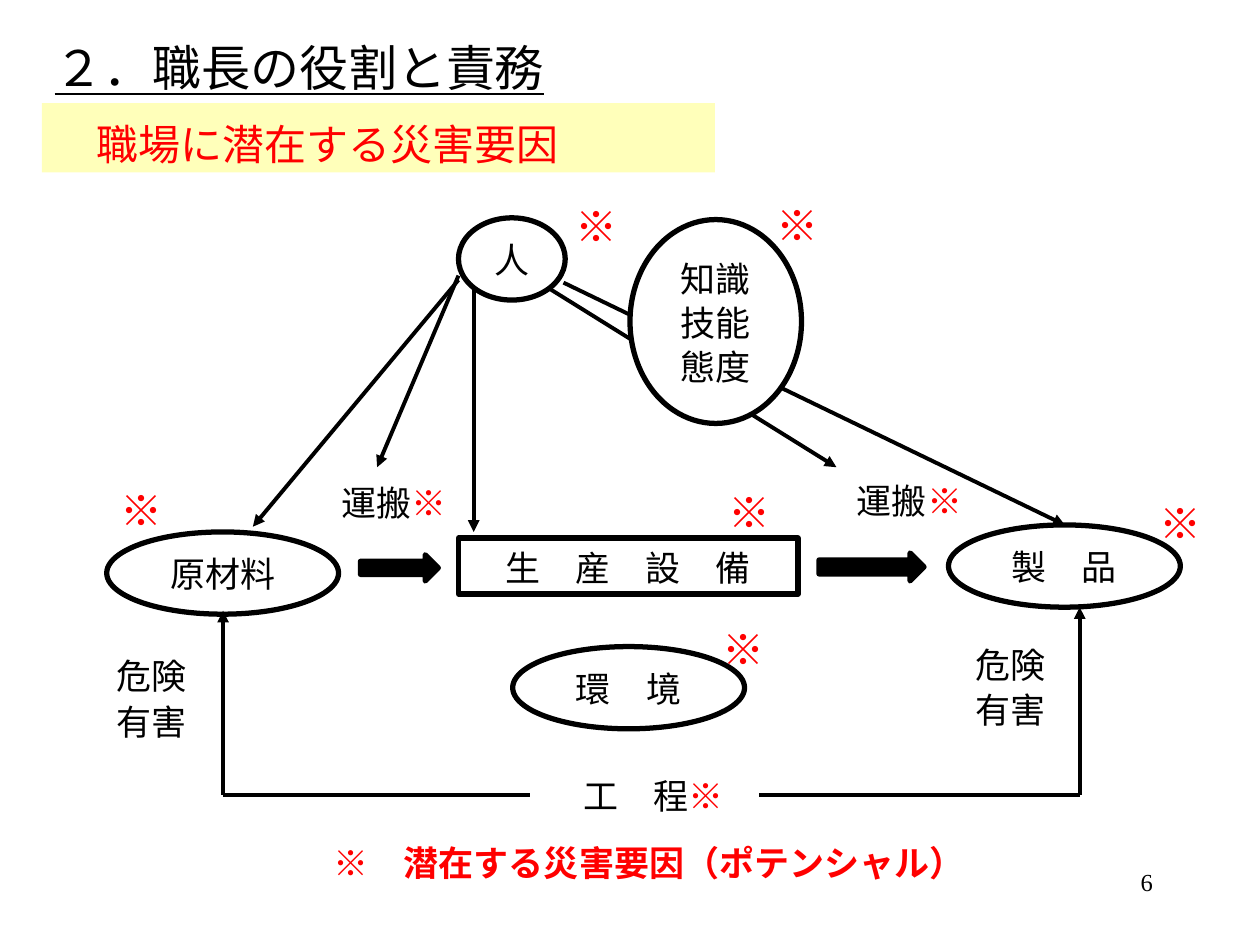
from pptx import Presentation
from pptx import util as u
from pptx.dml.color import RGBColor
from pptx.enum import shapes, text
from pptx.oxml.ns import qn
from lxml import etree

GOTHIC = "Noto Sans CJK JP"
BLACK, RED, WHITE, YELLOW = "000000", "FF0000", "FFFFFF", "FFFF00"
MARK = "※"
SHAPE = shapes.MSO_SHAPE
ALIGN = text.PP_ALIGN


def color(value):
    return RGBColor.from_string(value)


def place(box, left, top, width, height):
    box.left, box.top = u.Pt(left), u.Pt(top)
    box.width, box.height = u.Pt(width), u.Pt(height)


def format_span(span, size, ink, bold=False, font=GOTHIC):
    span.font.size = u.Pt(size)
    span.font.name = font
    span.font.bold = bold
    span.font.color.rgb = color(ink)
    east_asian = etree.SubElement(span.font._element, qn("a:ea"))
    east_asian.set("typeface", font)


def write(box, words, size=20, ink=BLACK, bold=False, spacing=None,
          align=ALIGN.CENTER, anchor=text.MSO_ANCHOR.TOP, font=GOTHIC):
    """Fill a box with lines of text in one style."""
    frame = box.text_frame
    frame.word_wrap = True
    frame.auto_size = text.MSO_AUTO_SIZE.NONE
    frame.vertical_anchor = anchor
    frame.text = words
    for para in frame.paragraphs:
        para.alignment = align
        para.space_before = u.Pt(0)
        if spacing:
            para.line_spacing = u.Pt(spacing)
        for span in para.runs:
            format_span(span, size, ink, bold, font)
    return frame


def add_label(page, words, bounds, **style):
    box = page.shapes.add_textbox(*map(u.Pt, bounds))
    return write(box, words, **style)


def add_marked_label(page, words, bounds):
    """A black label that ends in a red mark."""
    frame = add_label(page, words, bounds)
    span = frame.paragraphs[0].add_run()
    span.text = MARK
    format_span(span, 20, RED, bold=True)


def add_figure(page, kind, bounds, fill=None, line=BLACK):
    figure = page.shapes.add_shape(kind, *map(u.Pt, bounds))
    figure.shadow.inherit = False
    if fill:
        figure.fill.solid()
        figure.fill.fore_color.rgb = color(fill)
    else:
        figure.fill.background()
    if line:
        figure.line.color.rgb = color(line)
        figure.line.width = u.Pt(3)
    else:
        figure.line.fill.background()
    return figure


def add_node(page, kind, words, bounds, fill=None):
    node = add_figure(page, kind, bounds, fill)
    write(node, words, spacing=25, anchor=text.MSO_ANCHOR.MIDDLE)


def add_line(page, start, end, arrow=True):
    """A line whose arrowhead, if any, sits at its start."""
    line = page.shapes.add_connector(
        shapes.MSO_CONNECTOR.STRAIGHT, *map(u.Pt, start + end))
    line.line.color.rgb = color(BLACK)
    line.line.width = u.Pt(2.25)
    if arrow:
        head = etree.SubElement(line.line._get_or_add_ln(), qn("a:headEnd"))
        head.set("type", "triangle")
    etree.SubElement(line._element.spPr, qn("a:effectLst"))


def add_headings(page):
    title = page.shapes.title
    place(title, 24, 18, 314, 41)
    write(title, "２．職長の役割と責務", size=28, align=ALIGN.LEFT)
    title.text_frame.paragraphs[0].runs[0].font.underline = True

    band = add_figure(page, SHAPE.RECTANGLE, (24, 59, 384.5, 39.6),
                      fill=YELLOW, line=None)
    tint = band._element.spPr.find(qn("a:solidFill"))[0]
    etree.SubElement(tint, qn("a:alpha")).set("val", "27000")
    write(band, "\u3000職場に潜在する災害要因".replace("\u3000", "　"),
          size=24, ink=RED, spacing=34, align=ALIGN.LEFT)


def add_marks(page):
    # The mark beside the person sits in a white frame
    frame = add_figure(page, SHAPE.RECTANGLE, (322, 114, 33, 34), line=WHITE)
    style = {"size": 24, "ink": RED, "bold": True}
    write(frame, MARK, spacing=25, anchor=text.MSO_ANCHOR.MIDDLE, **style)
    for bounds in ((58, 277, 46, 34), (433.5, 114, 45, 34),
                   (651, 284.5, 47, 34)):
        add_label(page, MARK, bounds, spacing=25, **style)
    for bounds in ((406, 353, 35, 37), (409, 274.5, 33, 37)):
        add_label(page, MARK, bounds, **style)


def main():
    deck = Presentation()
    deck.slide_width, deck.slide_height = u.Pt(720), u.Pt(540)
    page = deck.slides.add_slide(deck.slide_layouts[5])
    add_headings(page)
    add_marks(page)

    # Things in the workplace
    for words, bounds in (("原材料", (61, 304, 132.5, 47)),
                          ("人", (262, 124.5, 61, 47)),
                          ("環　境", (293, 369.5, 132.5, 47)),
                          ("製　品", (542, 300, 132.5, 47))):
        add_node(page, SHAPE.OVAL, words, bounds)
    add_node(page, SHAPE.RECTANGLE, "生　産　設　備", (262, 307.5, 194, 32))

    # Flow from material to product
    for bounds in ((206, 317, 44.5, 15), (468, 316, 60, 16)):
        add_figure(page, SHAPE.RIGHT_ARROW, bounds, fill=BLACK)

    # Labels
    for bounds in ((45.5, 368.5, 82, 60.5), (542, 362, 70.5, 60.5)):
        add_label(page, "危険\n有害", bounds, spacing=26)
    for words, bounds in (("工　程", (322, 439, 103, 32)),
                          ("運搬", (186, 271.5, 78.5, 32)),
                          ("運搬", (474.5, 270.5, 90.5, 32))):
        add_marked_label(page, words, bounds)
    add_label(page, "※　潜在する災害要因（ポテンシャル）", (172, 476.5, 398, 33),
              ink=RED, bold=True, spacing=25)

    # Arrows from the person
    for tip, origin in (((144.5, 301), (262, 160)),
                        ((215.5, 267), (262, 157.5)),
                        ((270.7, 304), (270.7, 165)),
                        ((478, 267), (314, 165)),
                        ((608.5, 300), (322, 161.5))):
        add_line(page, tip, origin)

    # Process loop
    base = 454.3
    for side, top, inner in ((127.5, 349, 303), (617, 347, 433.5)):
        add_line(page, (side, top), (side, base))
        add_line(page, (side, base), (inner, base), arrow=False)

    # Personal qualities cover the arrows behind them
    add_node(page, SHAPE.OVAL, "知識\n技能\n態度", (360, 125.5, 98, 116.5),
             fill=WHITE)

    # Page number
    add_label(page, "6", (516, 492, 150, 36), size=14, align=ALIGN.RIGHT,
              font="Times New Roman")
    deck.save("out.pptx")


if __name__ == "__main__":
    main()
